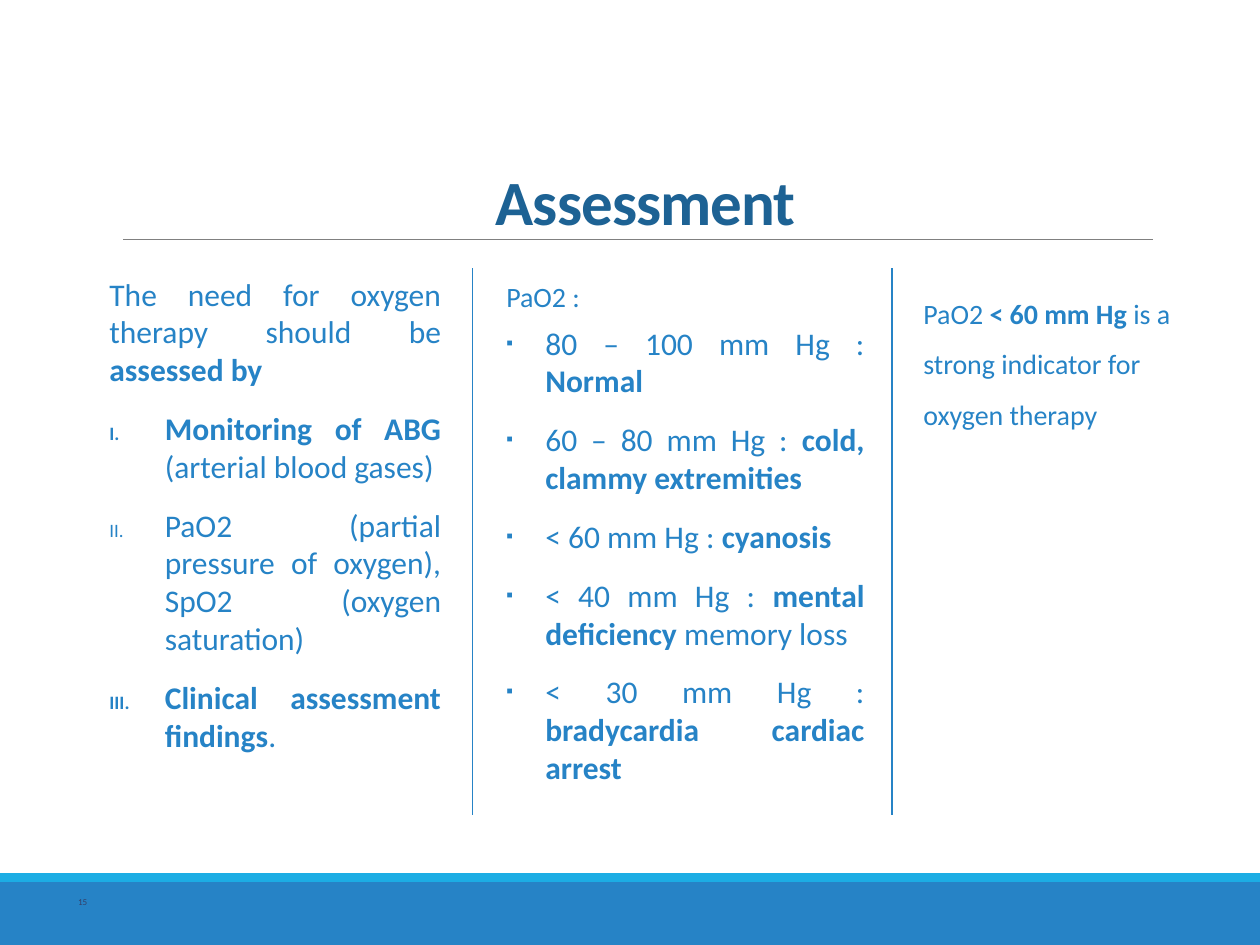
from lxml import etree
from pptx import Presentation
from pptx.dml.color import RGBColor
from pptx.enum import shapes, text
from pptx.oxml import ns
from pptx.util import Inches, Pt

BLUE = "2683C6"
JUST = text.PP_ALIGN.JUSTIFY
NEED = [
    [("Monitoring of ABG ", True), ("(arterial blood gases)", False)],
    [("PaO2 (partial pressure of oxygen), SpO2 (oxygen saturation)", False)],
    [("Clinical assessment findings", True), (".", False)],
]
LEVELS = [
    [("80 – 100 mm Hg : ", False), ("Normal", True)],
    [("60 – 80 mm Hg : ", False), ("cold, clammy extremities", True)],
    [("< 60 mm Hg : ", False), ("cyanosis", True)],
    [("< 40 mm Hg : ", False), ("mental deficiency ", True), ("memory loss", False)],
    [("< 30 mm Hg : ", False), ("bradycardia cardiac arrest", True)],
]


def paint(target, color):
    target.rgb = RGBColor.from_string(color)


def add_bar(slide, top, height, color):
    bar = slide.shapes.add_shape(shapes.MSO_SHAPE.RECTANGLE, 0, Inches(top), Inches(10), Inches(height))
    bar.shadow.inherit = False
    bar.fill.solid()
    paint(bar.fill.fore_color, color)
    bar.line.fill.background()


def add_rule(slide, start, end, color, width):
    ends = [Inches(v) for v in start + end]
    rule = slide.shapes.add_connector(shapes.MSO_CONNECTOR.STRAIGHT, *ends)
    paint(rule.line.color, color)
    rule.line.width = Pt(width)
    etree.SubElement(rule._element.spPr, ns.qn("a:effectLst"))


def add_box(slide, left, top, width, height, anchor=None):
    box = slide.shapes.add_textbox(Inches(left), Inches(top), Inches(width), Inches(height))
    frame = box.text_frame
    frame.word_wrap = True
    if anchor is None:
        frame.auto_size = text.MSO_AUTO_SIZE.SHAPE_TO_FIT_TEXT
    else:
        frame.vertical_anchor = anchor
        frame.margin_left = frame.margin_right = frame.margin_top = frame.margin_bottom = 0
    return frame


def add_runs(para, runs, size, color=BLUE):
    for words, bold in runs:
        run = para.add_run()
        run.text = words
        font = run.font
        font.name, font.size, font.bold = "Calibri", Pt(size), bold
        paint(font.color, color)


def add_list(frame, items, indent, mark, **attrs):
    for runs in items:
        para = frame.add_paragraph()
        para.alignment = JUST
        para.space_before = para.space_after = Pt(6)
        props = para._p.get_or_add_pPr()
        props.set("marL", str(Inches(indent)))
        props.set("indent", str(-Inches(indent)))
        tint = etree.SubElement(props, ns.qn("a:buClr"))
        etree.SubElement(tint, ns.qn("a:srgbClr"), val=BLUE)
        etree.SubElement(props, ns.qn("a:buSzPct"), val="60000")
        etree.SubElement(props, ns.qn("a:buFont"), typeface="Calibri")
        etree.SubElement(props, ns.qn(mark), **attrs)
        add_runs(para, runs, 18)


def add_title(slide):
    para = add_box(slide, 1.04, 0.77, 8.17, 1.12, text.MSO_ANCHOR.BOTTOM).paragraphs[0]
    para.alignment = text.PP_ALIGN.CENTER
    para.line_spacing = 0.85
    add_runs(para, [("Assessment", True)], 36, "1D6294")
    para.runs[0].font._element.set("spc", "-50")


def add_need(slide):
    frame = add_box(slide, 0.77, 2.13, 2.83, 3.94)
    para = frame.paragraphs[0]
    para.alignment = JUST
    para.space_after = Pt(6)
    add_runs(para, [("The need for oxygen therapy should be ", False), ("assessed by", True)], 18)
    add_list(frame, NEED, 0.44, "a:buAutoNum", type="romanUcPeriod")


def add_levels(slide):
    frame = add_box(slide, 3.92, 2.17, 3.04, 4.16)
    para = frame.paragraphs[0]
    para.alignment = JUST
    add_runs(para, [("PaO2 :", False)], 16)
    add_list(frame, LEVELS, 0.31, "a:buChar", char="▪")


def add_sign(slide):
    para = add_box(slide, 7.23, 2.17, 2.19, 1.27).paragraphs[0]
    para.line_spacing = 1.5
    runs = [("PaO2 ", False), ("< 60 mm Hg ", True), ("is a strong indicator for oxygen therapy", False)]
    add_runs(para, runs, 16)


def main():
    deck = Presentation()
    deck.slide_width, deck.slide_height = Inches(10), Inches(7.5)
    slide = deck.slides.add_slide(deck.slide_layouts[6])
    add_bar(slide, 7, 0.5, BLUE)
    add_bar(slide, 6.93, 0.07, "1CADE4")
    add_rule(slide, (0.98, 1.9), (9.15, 1.9), "808080", 0.5)
    number = add_box(slide, 0.62, 7.07, 0.15, 0.18, text.MSO_ANCHOR.MIDDLE)
    add_runs(number.paragraphs[0], [("15", False)], 5.2, "344068")
    add_title(slide)
    add_need(slide)
    add_levels(slide)
    add_sign(slide)
    for left in (3.75, 7.08):
        add_rule(slide, (left, 2.13), (left, 6.47), BLUE, 1)
    deck.save("out.pptx")


if __name__ == "__main__":
    main()
